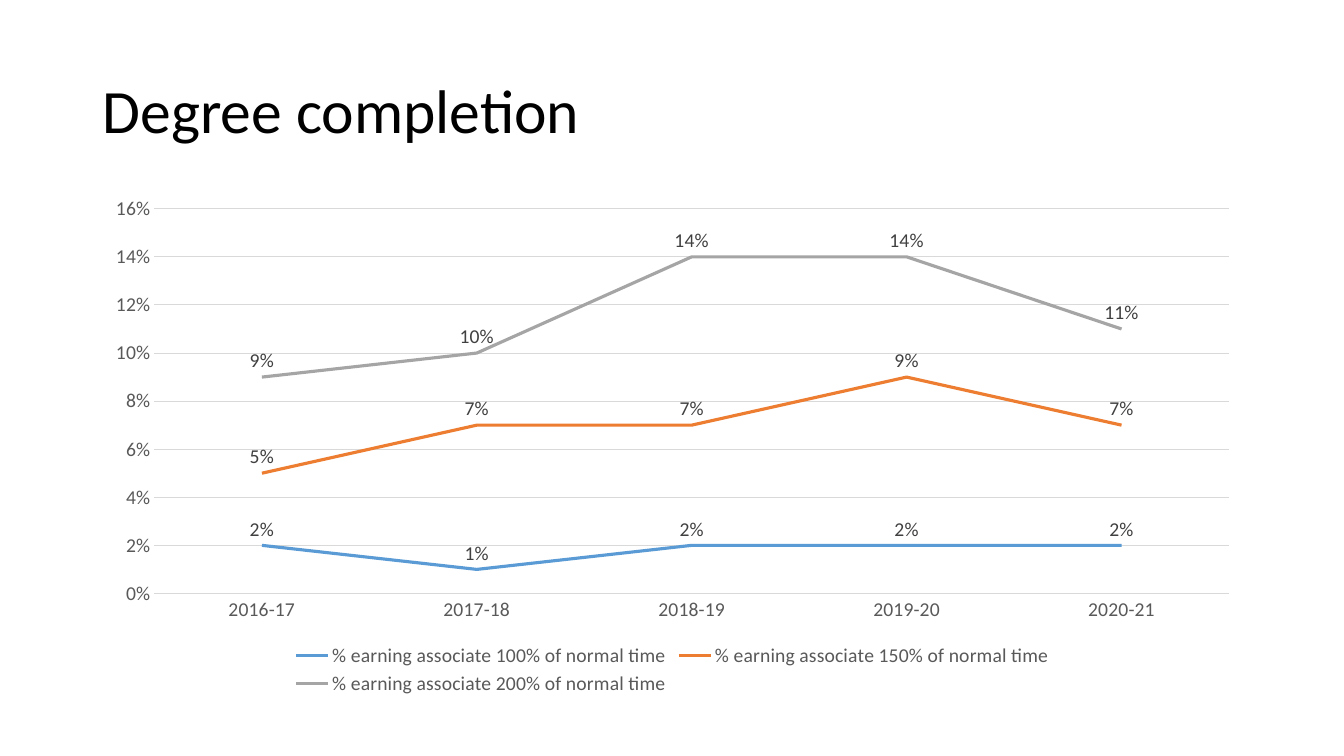
from dataclasses import dataclass

from pptx import Presentation
from pptx.chart.data import CategoryChartData
from pptx.dml.color import RGBColor
from pptx.enum.chart import XL_CHART_TYPE, XL_LABEL_POSITION, XL_LEGEND_POSITION
from pptx.enum.chart import XL_MARKER_STYLE, XL_TICK_MARK
from pptx.enum.text import MSO_ANCHOR
from pptx.util import Inches, Pt

LINE_CHART = XL_CHART_TYPE.LINE
LABEL_ABOVE = XL_LABEL_POSITION.ABOVE
LEGEND_BOTTOM = XL_LEGEND_POSITION.BOTTOM
NO_MARKER = XL_MARKER_STYLE.NONE
NO_TICK = XL_TICK_MARK.NONE
MIDDLE = MSO_ANCHOR.MIDDLE


@dataclass(frozen=True)
class Theme:
    """Colours, font and type sizes of the slide."""
    font: str = "Calibri"
    title_size: float = 44
    chart_size: float = 14
    series_width: float = 2.25
    grid_width: float = 0.75
    title: str = "000000"
    axis_text: str = "595959"
    label_text: str = "404040"
    grid: str = "D9D9D9"
    series: tuple = ("5B9BD5", "ED7D31", "A5A5A5")


THEME = Theme()
WIDTH, HEIGHT = Inches(13.33), Inches(7.5)
TITLE_BOX = (0.92, 0.4, 11.5, 1.45)
CHART_BOX = (0.92, 1.85, 11.5, 5.09)
PERCENT = "0%"
YEARS = ("2016-17", "2017-18", "2018-19", "2019-20", "2020-21")
COMPLETION = {
    "100%": (0.02, 0.01, 0.02, 0.02, 0.02),
    "150%": (0.05, 0.07, 0.07, 0.09, 0.07),
    "200%": (0.09, 0.10, 0.14, 0.14, 0.11),
}


def apply_format(target, values):
    """Set every attribute named in values on the target."""
    for name, value in values.items():
        setattr(target, name, value)


def style_font(font, size, colour):
    """Give a font the theme typeface, a size and a colour."""
    apply_format(font, {"name": THEME.font, "size": Pt(size), "bold": False})
    font.color.rgb = RGBColor.from_string(colour)


def style_line(line, width, colour):
    """Give a line a width and a solid colour."""
    line.width = Pt(width)
    line.color.rgb = RGBColor.from_string(colour)


def add_title(slide, box, text):
    """Place the slide title in the box."""
    frame = slide.shapes.add_textbox(*map(Inches, box)).text_frame
    apply_format(frame, {"word_wrap": True, "vertical_anchor": MIDDLE})
    paragraph = frame.paragraphs[0]
    paragraph.line_spacing = 0.9
    run = paragraph.add_run()
    run.text = text
    style_font(run.font, THEME.title_size, THEME.title)


def style_axes(chart):
    """Format the year axis, the percentage axis and the gridlines."""
    for axis in (chart.category_axis, chart.value_axis):
        apply_format(axis, {"major_tick_mark": NO_TICK, "minor_tick_mark": NO_TICK})
        style_font(axis.tick_labels.font, THEME.chart_size, THEME.axis_text)
    style_line(chart.category_axis.format.line, THEME.grid_width, THEME.grid)
    value_axis = chart.value_axis
    apply_format(value_axis, {"minimum_scale": 0, "maximum_scale": 0.16,
                              "major_unit": 0.02, "has_major_gridlines": True})
    apply_format(value_axis.tick_labels, {"number_format": PERCENT,
                                          "number_format_is_linked": False})
    value_axis.format.line.fill.background()
    style_line(value_axis.major_gridlines.format.line, THEME.grid_width, THEME.grid)


def style_series(series, colour):
    """Format one line and the labels above its points."""
    series.smooth = False
    series.marker.style = NO_MARKER
    style_line(series.format.line, THEME.series_width, colour)
    labels = series.data_labels
    apply_format(labels, {"show_value": True, "position": LABEL_ABOVE,
                          "number_format": PERCENT, "number_format_is_linked": False})
    style_font(labels.font, THEME.chart_size, THEME.label_text)


def add_completion_chart(slide, box):
    """Place the degree completion line chart in the box."""
    data = CategoryChartData(number_format=PERCENT)
    data.categories = YEARS
    for share, values in COMPLETION.items():
        data.add_series(f"% earning associate {share} of normal time", values)
    chart = slide.shapes.add_chart(LINE_CHART, *map(Inches, box), data).chart
    apply_format(chart, {"has_title": False, "has_legend": True})
    style_font(chart.font, THEME.chart_size, THEME.title)
    apply_format(chart.legend, {"position": LEGEND_BOTTOM, "include_in_layout": False})
    style_font(chart.legend.font, THEME.chart_size, THEME.axis_text)
    style_axes(chart)
    plot = chart.plots[0]
    plot.vary_by_categories = False
    for series, colour in zip(plot.series, THEME.series):
        style_series(series, colour)


def main():
    """Build and save the presentation."""
    presentation = Presentation()
    apply_format(presentation, {"slide_width": WIDTH, "slide_height": HEIGHT})
    slide = presentation.slides.add_slide(presentation.slide_layouts[6])
    add_title(slide, TITLE_BOX, "Degree completion")
    add_completion_chart(slide, CHART_BOX)
    presentation.save("out.pptx")


if __name__ == "__main__":
    main()
